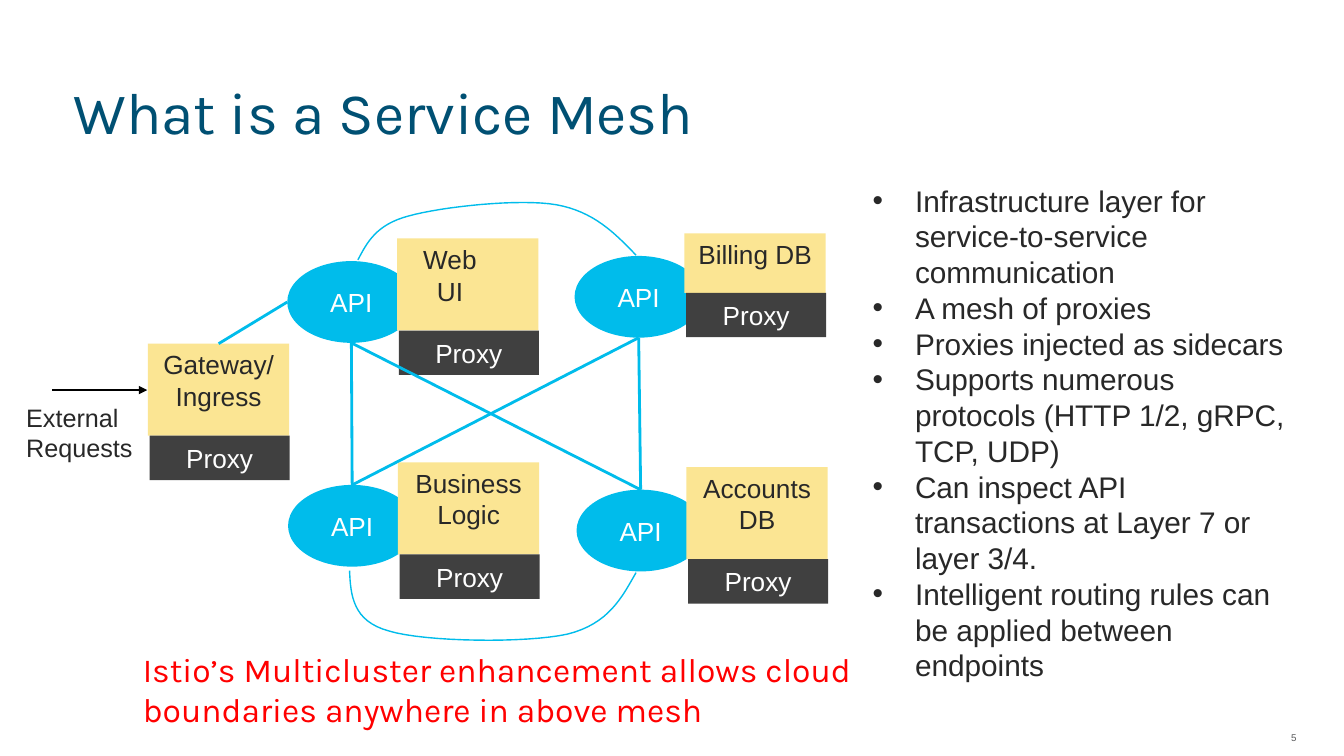
"""Builds the service mesh slide with its proxy diagram and bullet list."""
from lxml.etree import SubElement
from pptx import Presentation
from pptx.dml.color import RGBColor
from pptx.enum.shapes import MSO_CONNECTOR, MSO_SHAPE
from pptx.enum.text import MSO_ANCHOR, PP_ALIGN
from pptx.oxml.ns import qn
from pptx.util import Cm, Pt

NAVY = RGBColor(0x00, 0x50, 0x73)
SKY = RGBColor(0x00, 0xBC, 0xEB)
SAND = RGBColor(0xFB, 0xE5, 0x93)
CHARCOAL = RGBColor(0x40, 0x40, 0x40)
INK = RGBColor(0x28, 0x28, 0x28)
GRAY = RGBColor(0x58, 0x59, 0x5B)
RED = RGBColor(0xFF, 0x00, 0x00)
BLACK = RGBColor(0x00, 0x00, 0x00)
WHITE = RGBColor(0xFF, 0xFF, 0xFF)

API_WIDTH, API_HEIGHT = 3.23, 2.06
CARD_WIDTH, CARD_HEIGHT = 3.56, 2.32
PROXY_WIDTH, PROXY_HEIGHT = 3.53, 1.12
CURVE_STEPS = 16

WEB, BILLING = (7.24, 6.58), (14.48, 6.45)
BUSINESS, ACCOUNTS = (7.26, 12.22), (14.53, 12.34)
GATEWAY = (3.73, 8.66)

TOP_ARC = [(9.02, 6.55), (9.25, 6.12), (9.47, 5.66), (10.31, 5.44),
           (11.15, 5.21), (13.08, 5.0), (14.02, 5.16),
           (14.96, 5.33), (15.49, 5.87), (16.03, 6.43)]
BOTTOM_ARC = [(8.81, 14.38), (8.84, 15.01), (8.89, 15.65), (9.8, 15.9),
              (10.72, 16.18), (13.26, 16.21), (14.3, 15.98),
              (15.34, 15.72), (15.67, 15.06), (16.03, 14.43)]

POINTS = [
    "Infrastructure layer for service-to-service communication",
    "A mesh of proxies",
    "Proxies injected as sidecars",
    "Supports numerous protocols (HTTP 1/2, gRPC, TCP, UDP)",
    "Can inspect API transactions at Layer 7 or layer 3/4.",
    "Intelligent routing rules can be applied between endpoints",
]


def set_font(paragraph, size, color, name="Arial"):
    """Set size, colour and typeface of a paragraph."""
    paragraph.font.size = Pt(size)
    paragraph.font.color.rgb = color
    paragraph.font.name = name


def add_bullet(paragraph):
    """Give a paragraph a hanging round bullet."""
    properties = paragraph._p.get_or_add_pPr()
    properties.set("marL", str(Cm(1.07)))
    properties.set("indent", str(-Cm(1.07)))
    SubElement(properties, qn("a:buFont")).set("typeface", "Arial")
    SubElement(properties, qn("a:buChar")).set("char", "•")


def add_text(slide, box, lines, size, color, name="Arial", wrap=True, bullets=False):
    """Add a text box with one paragraph per line and return its frame."""
    frame = slide.shapes.add_textbox(*map(Cm, box)).text_frame
    frame.word_wrap = wrap
    frame.text = "\n".join(lines)
    for paragraph in frame.paragraphs:
        if bullets:
            add_bullet(paragraph)
        set_font(paragraph, size, color, name)
    return frame


def add_block(shapes, kind, box, text, fill, color, anchor=MSO_ANCHOR.MIDDLE):
    """Add a filled shape with centred text and return it."""
    shape = shapes.add_shape(kind, *map(Cm, box))
    shape.shadow.inherit = False
    shape.fill.solid()
    shape.fill.fore_color.rgb = fill
    shape.line.fill.background()
    frame = shape.text_frame
    frame.word_wrap = True
    frame.vertical_anchor = anchor
    frame.text = text
    for paragraph in frame.paragraphs:
        paragraph.alignment = PP_ALIGN.CENTER
        set_font(paragraph, 18.7, color)
    return shape


def add_service(shapes, left, top, text, height=CARD_HEIGHT):
    """Add a service card above its sidecar proxy and return the card."""
    card = add_block(shapes, MSO_SHAPE.RECTANGLE, (left, top, CARD_WIDTH, height),
                     text, SAND, INK, MSO_ANCHOR.TOP)
    add_block(shapes, MSO_SHAPE.RECTANGLE,
              (left + 0.04, top + height, PROXY_WIDTH, PROXY_HEIGHT),
              "Proxy", CHARCOAL, WHITE)
    return card


def add_node(slide, position, text, height=CARD_HEIGHT):
    """Add a grouped API ellipse and service, and return the card."""
    left, top = position
    shapes = slide.shapes.add_group_shape().shapes
    add_block(shapes, MSO_SHAPE.OVAL, (left, top, API_WIDTH, API_HEIGHT),
              "API", SKY, WHITE)
    return add_service(shapes, left + 2.77, top - 0.57, text, height)


def add_line(slide, start, end, color=SKY, width=2, arrow=False):
    """Add a straight line, with an arrowhead at its end if wanted."""
    connector = slide.shapes.add_connector(
        MSO_CONNECTOR.STRAIGHT, *map(Cm, (*start, *end)))
    connector.line.color.rgb = color
    connector.line.width = Pt(width)
    if arrow:
        SubElement(connector.line._get_or_add_ln(), qn("a:tailEnd")).set("type", "triangle")
    SubElement(connector._element.spPr, qn("a:effectLst"))


def bezier_point(controls, t):
    """Return the point at t on a cubic curve, in EMU."""
    weights = ((1 - t) ** 3, 3 * t * (1 - t) ** 2, 3 * t ** 2 * (1 - t), t ** 3)
    return tuple(Cm(sum(w * c for w, c in zip(weights, axis))) for axis in zip(*controls))


def add_arc(slide, controls):
    """Add an open outline through a chain of cubic curves."""
    points = [bezier_point(controls[first:first + 4], step / CURVE_STEPS)
              for first in range(0, len(controls) - 1, 3)
              for step in range(1, CURVE_STEPS + 1)]
    builder = slide.shapes.build_freeform(*map(Cm, controls[0]))
    builder.add_line_segments(points, close=False)
    arc = builder.convert_to_shape()
    arc.shadow.inherit = False
    arc.fill.background()
    arc.line.color.rgb = SKY
    arc.line.width = Pt(1)


def add_title(slide, text):
    """Place and format the title placeholder."""
    title = slide.shapes.title
    title.left, title.top, title.width, title.height = map(Cm, (1.6, 1.42, 29.21, 2.49))
    frame = title.text_frame
    frame.text = text
    frame.vertical_anchor = MSO_ANCHOR.MIDDLE
    paragraph = frame.paragraphs[0]
    paragraph.alignment = PP_ALIGN.LEFT
    paragraph.line_spacing = Pt(58)
    set_font(paragraph, 42, NAVY, "Karla")


def add_page_number(slide, number):
    """Add the small page number in the lower right corner."""
    frame = add_text(slide, (32.54, 18.08, 1.32, 1.02), [number], 7, GRAY)
    frame.margin_left = frame.margin_right = frame.margin_top = frame.margin_bottom = 0
    frame.vertical_anchor = MSO_ANCHOR.MIDDLE
    frame.paragraphs[0].line_spacing = Pt(8)


def add_mesh(slide):
    """Add the four nodes, the gateway and the links between them."""
    web_card = add_node(slide, WEB, "Web\nUI")
    web_card.text_frame.paragraphs[0]._p.get_or_add_pPr().set("marR", str(Cm(0.9)))
    add_node(slide, BILLING, "Billing DB", 1.5)
    add_node(slide, ACCOUNTS, "Accounts\nDB")
    add_node(slide, BUSINESS, "Business Logic")
    add_service(slide.shapes, *GATEWAY, "Gateway/ Ingress")

    left, top = GATEWAY
    add_line(slide, (left + CARD_WIDTH / 2, top), (WEB[0], WEB[1] + API_HEIGHT / 2))
    for lower in (BUSINESS, ACCOUNTS):
        for upper in (WEB, BILLING):
            add_line(slide, (lower[0] + API_WIDTH / 2, lower[1]),
                     (upper[0] + API_WIDTH / 2, upper[1] + API_HEIGHT))
    for controls in (TOP_ARC, BOTTOM_ARC):
        add_arc(slide, controls)


def main():
    """Build and save the slide."""
    presentation = Presentation()
    presentation.slide_width, presentation.slide_height = Cm(33.87), Cm(19.05)
    slide = presentation.slides.add_slide(presentation.slide_layouts[5])
    add_title(slide, "What is a Service Mesh")
    add_page_number(slide, "5")
    add_line(slide, (1.32, 9.83), (3.71, 9.83), BLACK, 1.5, arrow=True)
    add_text(slide, (0.41, 10.01, 3.23, 1.8), ["External", "Requests"], 18, INK, wrap=False)
    add_text(slide, (21.74, 4.47, 11, 14.58), POINTS, 21.3, INK, bullets=True)
    add_text(slide, (3.35, 16.23, 19.15, 2.31),
             ["Istio’s Multicluster enhancement allows cloud boundaries anywhere in above mesh"],
             24, RED, "Karla")
    add_mesh(slide)
    presentation.save("out.pptx")


if __name__ == "__main__":
    main()
